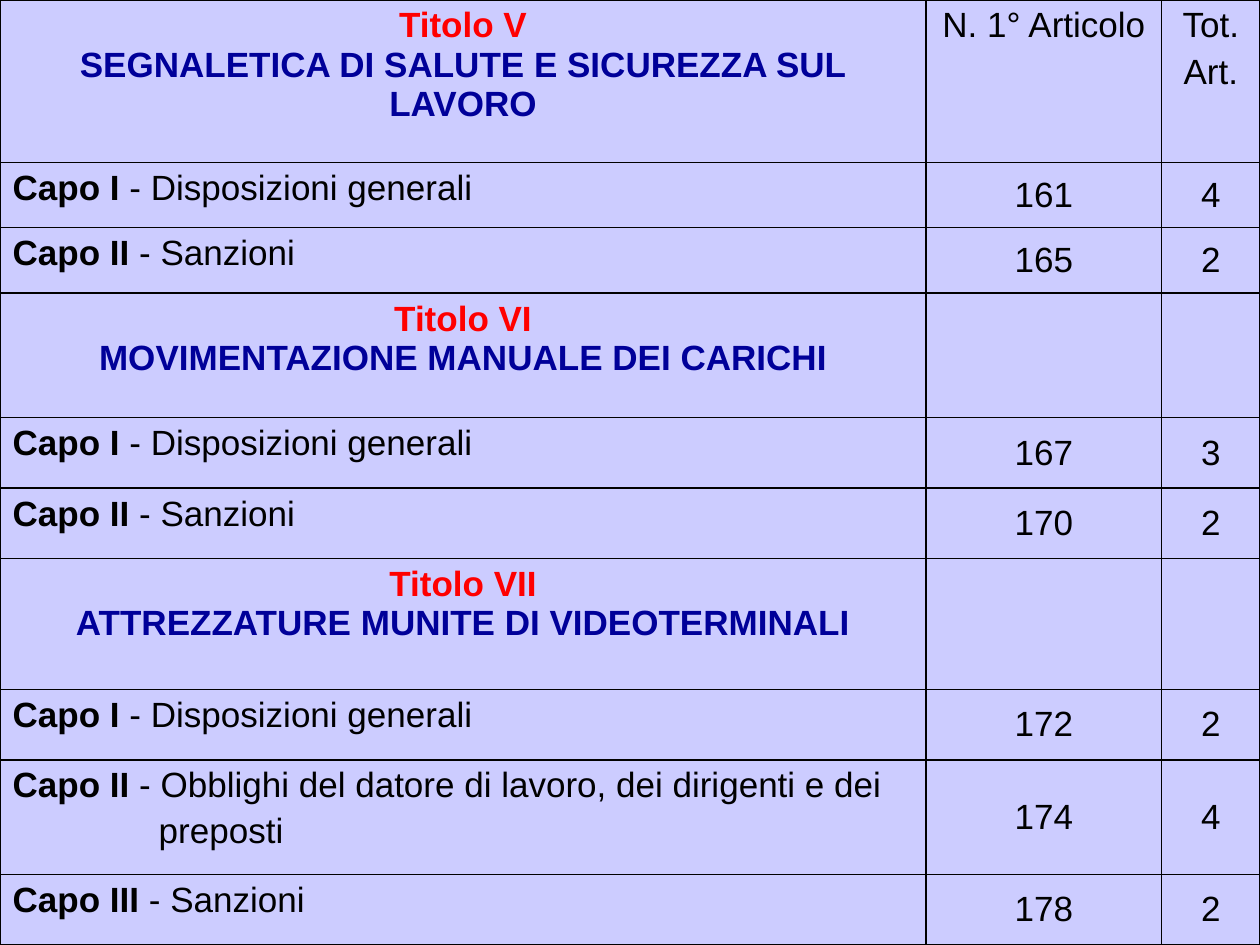
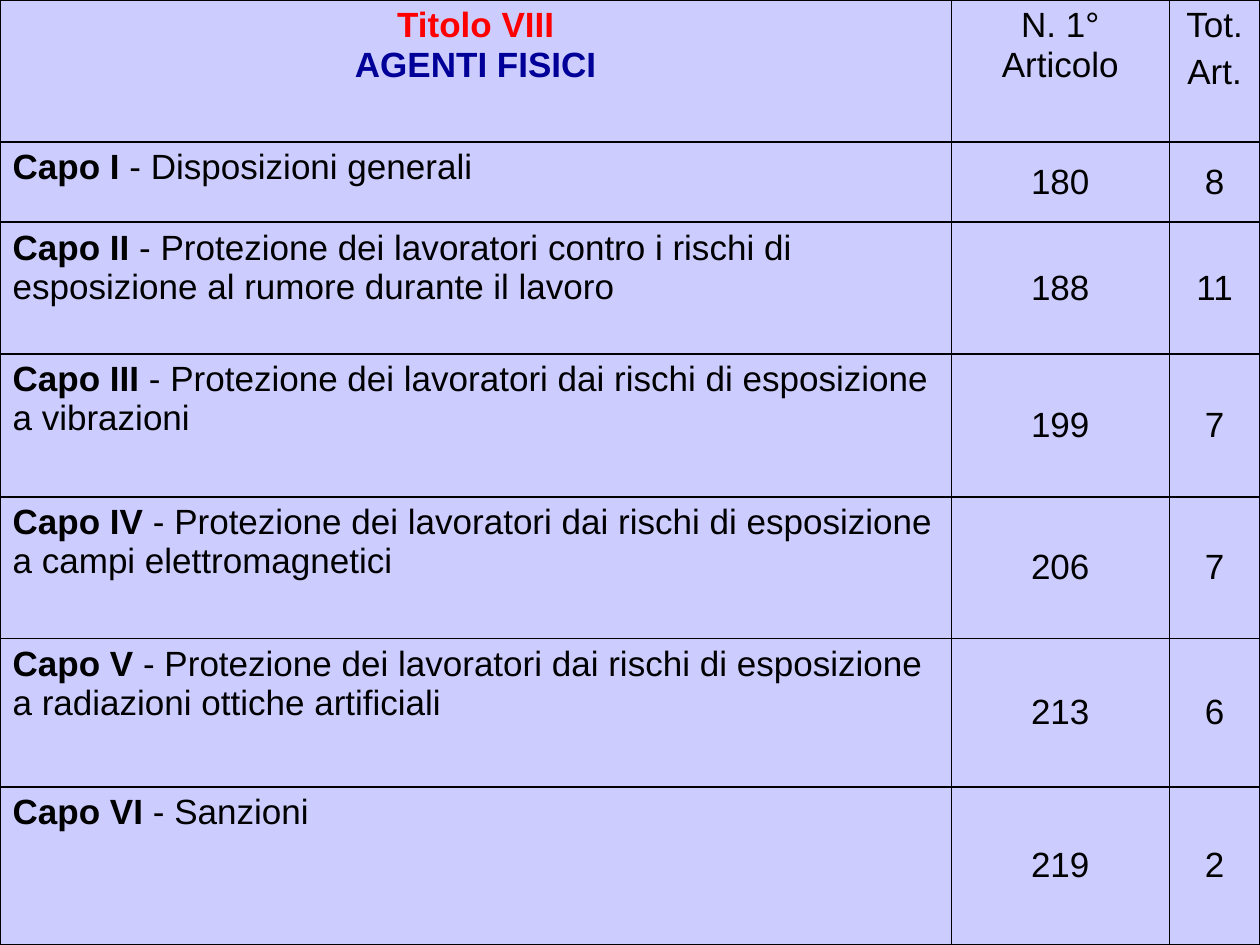
import pptx
import pptx.dml.color
import pptx.enum.text
import pptx.oxml
import pptx.oxml.ns
import pptx.util

COLOURS = {
    "cell": "CCCCFF",
    "border": "000000",
    "text": "000000",
    "titolo": "FF0000",
    "subject": "000099",
}
FONT = "Arial"
SIZE = pptx.util.Pt(20)
PARAGRAPH_GAP = pptx.util.Pt(4)
CONTINUATION_INDENT = pptx.util.Inches(1.16)
BORDER = pptx.util.Pt(1)
CENTRE = pptx.enum.text.PP_ALIGN.CENTER
LEFT = pptx.enum.text.PP_ALIGN.LEFT
MIDDLE = pptx.enum.text.MSO_ANCHOR.MIDDLE

COLUMN_HEADS = ("N. 1° Articolo", "Tot.\nArt.")
GENERAL = "Disposizioni generali"
SANCTIONS = "Sanzioni"
RISKS = "Protezione dei lavoratori dai rischi di esposizione a "

TITOLI_V_TO_VII = [
    (1.29, "Titolo V", "SEGNALETICA DI SALUTE E SICUREZZA SUL LAVORO", COLUMN_HEADS),
    (0.52, "Capo I", GENERAL, (161, 4)),
    (0.52, "Capo II", SANCTIONS, (165, 2)),
    (0.99, "Titolo VI", "MOVIMENTAZIONE MANUALE DEI CARICHI", ()),
    (0.56, "Capo I", GENERAL, (167, 3)),
    (0.56, "Capo II", SANCTIONS, (170, 2)),
    (1.04, "Titolo VII", "ATTREZZATURE MUNITE DI VIDEOTERMINALI", ()),
    (0.56, "Capo I", GENERAL, (172, 2)),
    (0.91, "Capo II", "Obblighi del datore di lavoro, dei dirigenti e dei\npreposti", (174, 4)),
    (0.56, "Capo III", SANCTIONS, (178, 2)),
]
TITOLO_VIII = [
    (1.13, "Titolo VIII", "AGENTI FISICI", COLUMN_HEADS),
    (0.64, "Capo I", GENERAL, (180, 8)),
    (1.05, "Capo II", "Protezione dei lavoratori contro i rischi di "
     "esposizione al rumore durante il lavoro", (188, 11)),
    (1.14, "Capo III", RISKS + "vibrazioni", (199, 7)),
    (1.13, "Capo IV", RISKS + "campi elettromagnetici", (206, 7)),
    (1.18, "Capo V", RISKS + "radiazioni ottiche artificiali", (213, 6)),
    (1.26, "Capo VI", SANCTIONS, (219, 2)),
]


def format_run(run, colour="text", bold=False):
    """Apply the common font with the given colour and weight."""
    run.font.name = FONT
    run.font.size = SIZE
    run.font.bold = bold
    run.font.color.rgb = pptx.dml.color.RGBColor.from_string(COLOURS[colour])


def style_cell(cell):
    """Outline the cell on all sides and fill it."""
    properties = cell._tc.get_or_add_tcPr()
    for side in ("lnL", "lnR", "lnT", "lnB"):
        properties.append(pptx.oxml.parse_xml(
            f'<a:{side} {pptx.oxml.ns.nsdecls("a")} w="{BORDER}"><a:solidFill>'
            f'<a:srgbClr val="{COLOURS["border"]}"/></a:solidFill></a:{side}>'))
    cell.fill.solid()
    cell.fill.fore_color.rgb = pptx.dml.color.RGBColor.from_string(COLOURS["cell"])


def write_lines(cell, text, alignment):
    """Write one paragraph per line, with a gap between paragraphs."""
    cell.text_frame.text = text
    for number, paragraph in enumerate(cell.text_frame.paragraphs):
        paragraph.alignment = alignment
        paragraph.space_before = PARAGRAPH_GAP if number else 0
        for run in paragraph.runs:
            format_run(run)


def write_titolo(cell, titolo, subject):
    """Write a centred heading: its number above its subject."""
    write_lines(cell, f"{titolo}\v{subject}", CENTRE)
    for run, colour in zip(cell.text_frame.paragraphs[0].runs, ("titolo", "subject")):
        format_run(run, colour, bold=True)


def write_capo(cell, capo, subject):
    """Write a chapter with a bold number and indented further lines."""
    write_lines(cell, f"{capo}\n{subject}", LEFT)
    first_line, *further_lines = subject.split("\n")
    write_lines(cell, "\n".join([capo, *further_lines]), LEFT)
    opening, *continuations = cell.text_frame.paragraphs
    format_run(opening.runs[0], bold=True)
    description = opening.add_run()
    description.text = f" - {first_line}"
    format_run(description)
    for continuation in continuations:
        continuation._p.get_or_add_pPr().set("marL", str(int(CONTINUATION_INDENT)))


def add_articles_table(slide, box, column_shares, entries):
    """Fill the box with a table of headings, chapters and article counts."""
    left, top, width, height = box
    table = slide.shapes.add_table(
        len(entries), len(column_shares), left, top, width, height).table
    table.first_row = table.horz_banding = False
    for column, share in zip(table.columns, column_shares):
        column.width = round(width * share / sum(column_shares))
    total = sum(entry[0] for entry in entries)
    for row, (share, number, subject, figures) in zip(table.rows, entries):
        row.height = round(height * share / total)
        subject_cell, *figure_cells = row.cells
        for cell in row.cells:
            style_cell(cell)
        is_titolo = number.startswith("Titolo")
        (write_titolo if is_titolo else write_capo)(subject_cell, number, subject)
        for cell, figure in zip(figure_cells, figures):
            write_lines(cell, str(figure), CENTRE)
            if not is_titolo:
                cell.vertical_anchor = MIDDLE


def main():
    """Build both slides and save them."""
    deck = pptx.Presentation()
    deck.slide_width = pptx.util.Inches(10)
    deck.slide_height = pptx.util.Inches(7.5)
    full_slide = (0, 0, deck.slide_width, deck.slide_height)
    for column_shares, entries in (
        ((7.35, 1.87, 0.78), TITOLI_V_TO_VII),
        ((7.55, 1.73, 0.72), TITOLO_VIII),
    ):
        slide = deck.slides.add_slide(deck.slide_layouts[6])
        add_articles_table(slide, full_slide, column_shares, entries)
    deck.save("out.pptx")


if __name__ == "__main__":
    main()
